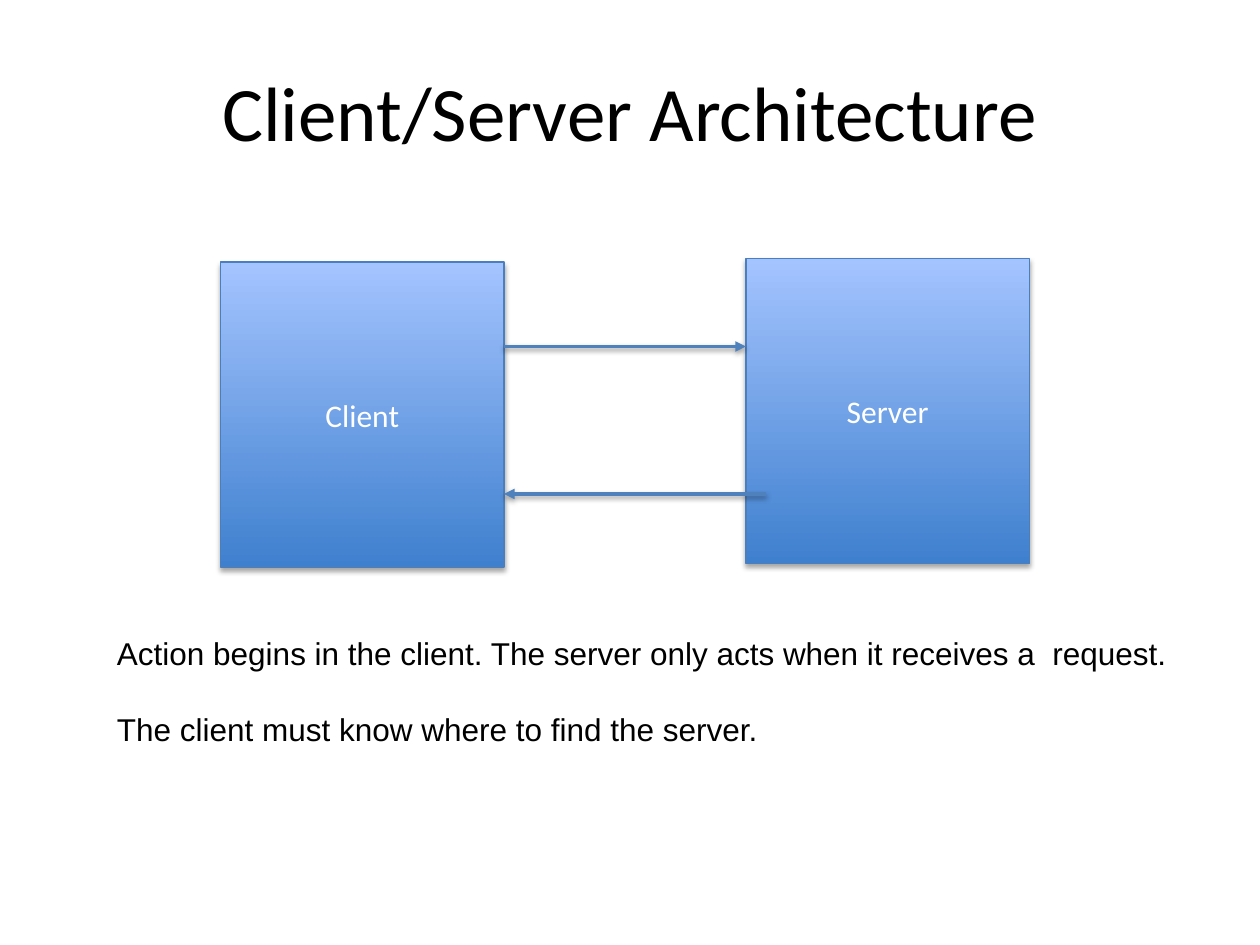
from lxml.etree import SubElement
from pptx import Presentation
from pptx.dml.color import RGBColor
from pptx.enum.shapes import MSO_CONNECTOR, MSO_SHAPE
from pptx.enum.text import MSO_ANCHOR, PP_ALIGN
from pptx.oxml.ns import qn
from pptx.util import Inches, Pt

TITLE = "Client/Server Architecture"
NODES = [("Client", 1.75, 2.08), ("Server", 5.92, 2.05)]  # label, left, top
NODE_SIZE = (2.25, 2.42)
MESSAGES = [(4, 5.92, 2.75), (6.08, 4, 3.92)]  # from x, to x, y
NOTES = [
    "Action begins in the client. The server only acts when it receives a  request.",
    "The client must know where to find the server.",
]
THEME = {
    "heading_font": "Calibri", "note_font": "Arial",
    "title_size": 44, "body_size": 18, "note_gap": 22,
    "text": "000000", "node_text": "FFFFFF",
    "node_bottom": "3F80CE", "node_top": "A4C4FF", "node_line": "4B7EBC",
    "arrow": "4F81BD", "shadow": "000000",
}


def rgb(role):
    return RGBColor.from_string(THEME[role])


def style(paragraph, font, size, color, align=PP_ALIGN.LEFT):
    paragraph.alignment = align
    paragraph.font.name = THEME[font]
    paragraph.font.size = Pt(THEME[size])
    paragraph.font.color.rgb = rgb(color)


def add_shadow(shape, opacity, distance):
    """Cast a soft downward shadow; call after fill and line are set."""
    effects = SubElement(shape.element.spPr, qn("a:effectLst"))
    outer = SubElement(effects, qn("a:outerShdw"), blurRad=str(Pt(3.1)),
                       dist=str(Pt(distance)), dir="5400000", rotWithShape="0")
    color = SubElement(outer, qn("a:srgbClr"), val=THEME["shadow"])
    SubElement(color, qn("a:alpha"), val=str(opacity * 1000))


def add_title(slide):
    frame = slide.shapes.add_textbox(
        Inches(0.5), Inches(0.25), Inches(9), Inches(1.25)).text_frame
    frame.word_wrap = True
    frame.vertical_anchor = MSO_ANCHOR.MIDDLE
    frame.text = TITLE
    style(frame.paragraphs[0], "heading_font", "title_size", "text", PP_ALIGN.CENTER)


def add_node(slide, label, left, top):
    node = slide.shapes.add_shape(
        MSO_SHAPE.RECTANGLE, Inches(left), Inches(top), *map(Inches, NODE_SIZE))
    node.fill.gradient()
    node.fill.gradient_angle = 90
    for stop, role in zip(node.fill.gradient_stops, ("node_bottom", "node_top")):
        stop.color.rgb = rgb(role)
    node.line.color.rgb = rgb("node_line")
    node.line.width = Pt(0.75)
    add_shadow(node, 35, 1.8)
    node.text_frame.vertical_anchor = MSO_ANCHOR.MIDDLE
    node.text_frame.text = label
    style(node.text_frame.paragraphs[0], "heading_font", "body_size", "node_text",
          PP_ALIGN.CENTER)


def add_message(slide, start, end, y):
    arrow = slide.shapes.add_connector(
        MSO_CONNECTOR.STRAIGHT, Inches(start), Inches(y), Inches(end), Inches(y))
    arrow.line.color.rgb = rgb("arrow")
    arrow.line.width = Pt(2)
    SubElement(arrow.element.spPr.find(qn("a:ln")), qn("a:tailEnd"), type="triangle")
    add_shadow(arrow, 38, 1.6)


def add_notes(slide):
    frame = slide.shapes.add_textbox(
        Inches(0.83), Inches(4.98), Inches(8.58), Inches(1.01)).text_frame
    frame.word_wrap = True
    frame.text = "\n".join(NOTES)
    for index, paragraph in enumerate(frame.paragraphs):
        style(paragraph, "note_font", "body_size", "text")
        if index:
            paragraph.space_before = Pt(THEME["note_gap"])


def main():
    deck = Presentation()
    deck.slide_width, deck.slide_height = Inches(10), Inches(7.5)
    slide = deck.slides.add_slide(deck.slide_layouts[6])
    add_title(slide)
    for node in NODES:
        add_node(slide, *node)
    for message in MESSAGES:
        add_message(slide, *message)
    add_notes(slide)
    deck.save("out.pptx")


if __name__ == "__main__":
    main()
